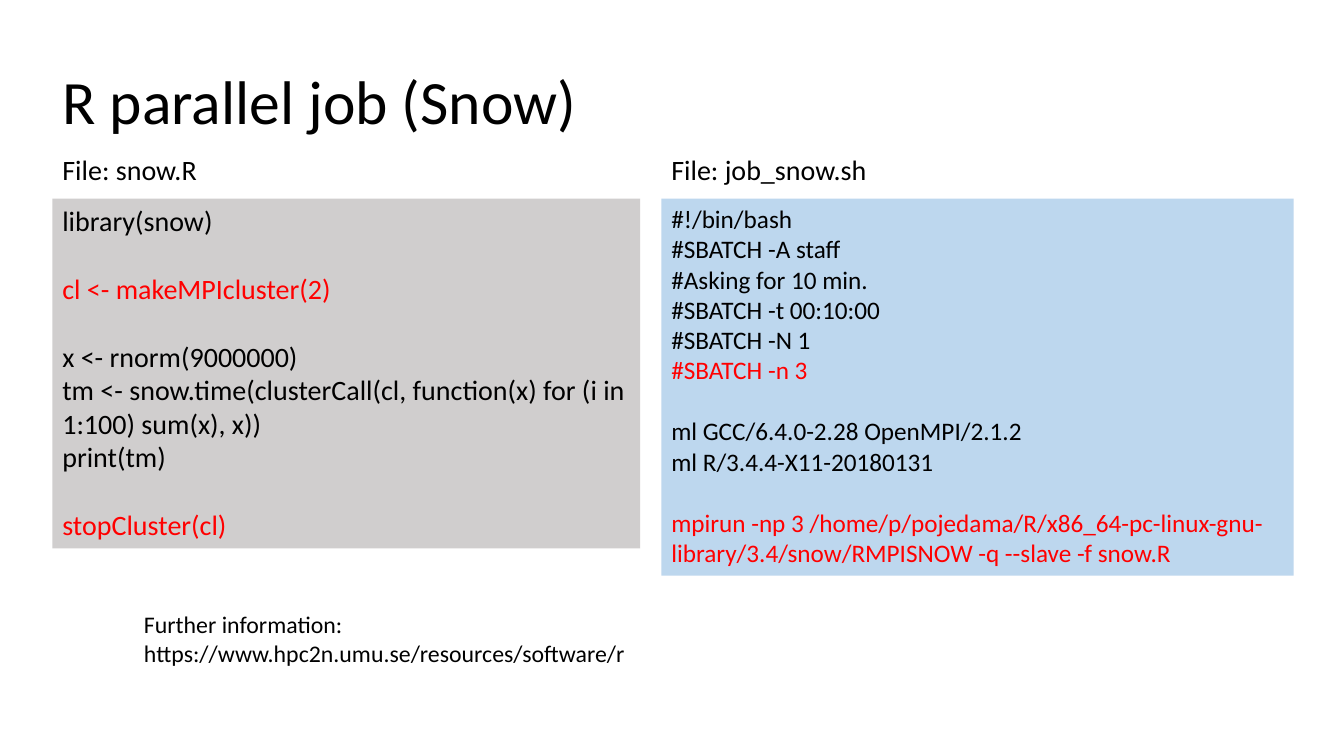
from pptx import Presentation
from pptx.dml.color import RGBColor
from pptx.enum.shapes import MSO_SHAPE
from pptx.enum.text import MSO_ANCHOR, PP_ALIGN
from pptx.util import Inches, Pt

BLACK = RGBColor(0x00, 0x00, 0x00)
RED = RGBColor(0xFF, 0x00, 0x00)
GRAY = RGBColor(0xD0, 0xCE, 0xCE)
BLUE = RGBColor(0xBD, 0xD7, 0xEE)

# Content: each file holds blocks of code lines, set apart by a gap
TITLE = "R parallel job (Snow)"
INFO = "Further information: https://www.hpc2n.umu.se/resources/software/r"
FILES = [
    {"name": "File: snow.R", "left": 0.52, "width": 5.83, "height": 3.47,
     "size": 20, "fill": GRAY, "blocks": [
         ["library(snow)"],
         ["cl <- makeMPIcluster(2)"],
         ["x <- rnorm(9000000)",
          "tm <- snow.time(clusterCall(cl, function(x) for (i in 1:100) sum(x), x))",
          "print(tm)"],
         ["stopCluster(cl)"]]},
    {"name": "File: job_snow.sh", "left": 6.56, "width": 6.27, "height": 3.74,
     "size": 18, "fill": BLUE, "blocks": [
         ["#!/bin/bash",
          "#SBATCH -A staff",
          "#Asking for 10 min.",
          "#SBATCH -t 00:10:00",
          "#SBATCH -N 1",
          "#SBATCH -n 3"],
         ["ml GCC/6.4.0-2.28 OpenMPI/2.1.2",
          "ml R/3.4.4-X11-20180131"],
         ["mpirun -np 3 /home/p/pojedama/R/x86_64-pc-linux-gnu-library/3.4/snow/RMPISNOW -q --slave -f snow.R"]]},
]
MARKED = {"cl <- makeMPIcluster(2)", "stopCluster(cl)", "#SBATCH -n 3",
          FILES[1]["blocks"][2][0]}
LINE = 1.22  # line height of Calibri, in font sizes


def write(shape, blocks, size, anchor=MSO_ANCHOR.TOP, spacing=1.0):
    frame = shape.text_frame
    frame.word_wrap = True
    frame.vertical_anchor = anchor
    para = None
    for block in blocks:
        for row, text in enumerate(block):
            first = para is None
            para = frame.paragraphs[0] if first else frame.add_paragraph()
            para.alignment = PP_ALIGN.LEFT
            para.line_spacing = spacing
            if row == 0 and not first:
                para.space_before = Pt(round(size * LINE, 1))
            run = para.add_run()
            run.text = text
            run.font.name = "Calibri"
            run.font.size = Pt(size)
            run.font.color.rgb = RED if text in MARKED else BLACK


def place(left, top, width, height):
    return [Inches(n) for n in (left, top, width, height)]


deck = Presentation()
deck.slide_width, deck.slide_height = Inches(13.33), Inches(7.5)
slide = deck.slides.add_slide(deck.slide_layouts[5])
shapes = slide.shapes

# Title
title = shapes.title
title.left, title.top, title.width, title.height = place(0.52, 0.44, 6.78, 1.2)
write(title, [[TITLE]], 44, anchor=MSO_ANCHOR.MIDDLE, spacing=0.9)

# Further information
write(shapes.add_textbox(*place(1.33, 6, 5.47, 0.67)), [[INFO]], 17)

# File names and code panels
for file in FILES:
    label = shapes.add_textbox(*place(file["left"], 1.46, 2.5, 0.44))
    write(label, [[file["name"]]], 20)
    panel = shapes.add_shape(
        MSO_SHAPE.RECTANGLE,
        *place(file["left"], 1.97, file["width"], file["height"]))
    panel.shadow.inherit = False
    panel.fill.solid()
    panel.fill.fore_color.rgb = file["fill"]
    panel.line.fill.background()
    write(panel, file["blocks"], file["size"])

deck.save("out.pptx")
